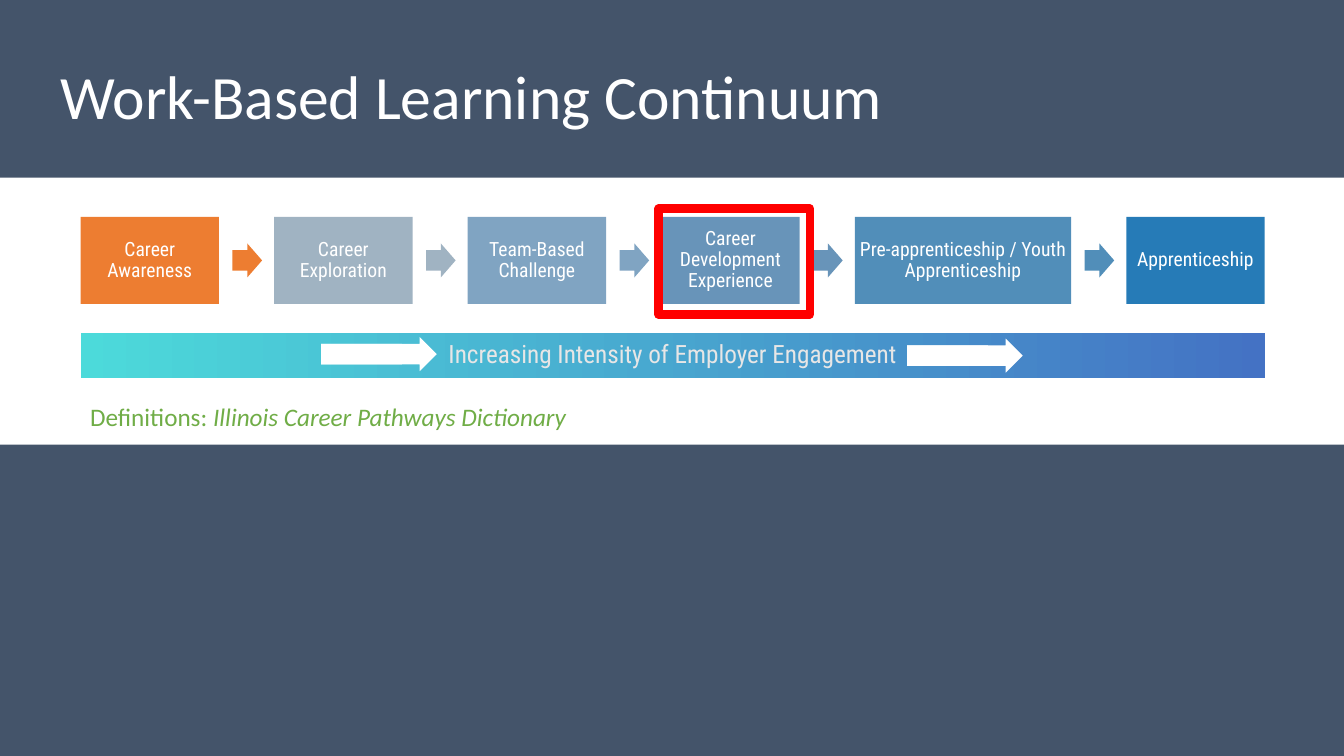
from lxml.etree import SubElement
from pptx import Presentation
from pptx.dml.color import RGBColor
from pptx.enum.shapes import MSO_SHAPE
from pptx.enum.text import MSO_ANCHOR, MSO_AUTO_SIZE, PP_ALIGN
from pptx.oxml.ns import qn
from pptx.util import Inches, Pt

COLORS = {
    "background": "44546A", "white": "FFFFFF", "label": "E7E6E6",
    "awareness": "ED7D31", "exploration": "A0B3C2", "challenge": "80A4C2",
    "development": "6894B9", "youth": "518EB9", "apprenticeship": "267BB7",
    "bar_start": "4CDADA", "bar_end": "4472C4",
    "definition": "70AD47", "highlight": "FF0000",
}
RGB = {name: RGBColor.from_string(value) for name, value in COLORS.items()}

prs = Presentation()
prs.slide_width, prs.slide_height = Inches(13.33), Inches(7.5)
COL, ROW = prs.slide_width / 100, prs.slide_height / 100
slide = prs.slides.add_slide(prs.slide_layouts[1])
slide.background.fill.solid()
slide.background.fill.fore_color.rgb = RGB["background"]


def add_block(kind, col, row, cols, rows, color=None):
    sp = slide.shapes.add_shape(
        kind, int(col * COL), int(row * ROW), int(cols * COL), int(rows * ROW))
    sp.shadow.inherit = False
    sp.line.fill.background()
    if color:
        sp.fill.solid()
        sp.fill.fore_color.rgb = RGB[color]
    else:
        sp.fill.background()
    if kind == MSO_SHAPE.RIGHT_ARROW:
        sp.adjustments[0], sp.adjustments[1] = 0.6, 0.5
    return sp


def format_text(sp, size, font, color, align, inset=0.1, spacing=1.0):
    tf = sp.text_frame
    tf.word_wrap = True
    tf.auto_size = MSO_AUTO_SIZE.NONE
    tf.vertical_anchor = MSO_ANCHOR.MIDDLE
    tf.margin_left = tf.margin_right = Inches(inset)
    tf.margin_top = tf.margin_bottom = Inches(0.05)
    p = tf.paragraphs[0]
    p.alignment = align
    p.line_spacing = spacing
    p.space_before = Pt(0)
    for r in p.runs:
        r.font.size, r.font.name = Pt(size), font
        r.font.color.rgb = RGB[color]


add_block(MSO_SHAPE.RECTANGLE, 0, 23.5, 100, 35.3, "white")

STAGES = [
    ("Career Awareness", "awareness", 10.3),
    ("Career Exploration", "exploration", 10.3),
    ("Team-Based Challenge", "challenge", 10.3),
    ("Career Development Experience", "development", 10.3),
    ("Pre-apprenticeship / Youth Apprenticeship", "youth", 16.1),
    ("Apprenticeship", "apprenticeship", 10.3),
]
GAP = 4.1
col = 6
for i, (text, color, cols) in enumerate(STAGES):
    sp = add_block(MSO_SHAPE.RECTANGLE, col, 28.7, cols, 11.5, color)
    sp.text_frame.text = text
    format_text(sp, 14, "Roboto Condensed", "white", PP_ALIGN.CENTER, 0.05, 0.9)
    if i < len(STAGES) - 1:
        add_block(MSO_SHAPE.RIGHT_ARROW, col + cols + 1, 32.2, 2.2, 4.5, color)
    col += cols + GAP

bar = add_block(MSO_SHAPE.RECTANGLE, 6, 44, 88.1, 6)
bar.fill.gradient()
bar.fill.gradient_angle = 0
for stop, color in zip(bar.fill.gradient_stops, ("bar_start", "bar_end")):
    stop.color.rgb = RGB[color]

label = add_block(MSO_SHAPE.RECTANGLE, 29.4, 44, 41.3, 5.6)
label.text_frame.text = "Increasing Intensity of Employer Engagement"
format_text(label, 18, "Roboto Condensed", "label", PP_ALIGN.CENTER)

for col, row in ((23.9, 44.6), (67.5, 44.8)):
    add_block(MSO_SHAPE.RIGHT_ARROW, col, row, 8.6, 4.5, "white")
    add_block(MSO_SHAPE.RECTANGLE, col, row + 0.9, 6, 2.7, "white")

body = slide.placeholders[1]
p = body.text_frame.paragraphs[0]
pPr = p._p.get_or_add_pPr()
pPr.set("marL", "0")
pPr.set("indent", "0")
SubElement(pPr, qn("a:buNone"))
p.add_run().text = "Definitions: "
r = p.add_run()
r.text = "Illinois Career Pathways Dictionary"
r.font.italic = True
format_text(body, 18, "Calibri", "definition", PP_ALIGN.LEFT, spacing=0.9)
body.text_frame.vertical_anchor = MSO_ANCHOR.TOP

title = slide.shapes.title
title.text_frame.text = "Work-Based Learning Continuum"
format_text(title, 44, "Calibri", "white", PP_ALIGN.LEFT)

for sp, (col, row, cols, rows) in (
        (body, (5.95, 52.9, 90.3, 4.1)), (title, (3.75, 5.3, 92.5, 14.5))):
    sp.left, sp.top = int(col * COL), int(row * ROW)
    sp.width, sp.height = int(cols * COL), int(rows * ROW)
    slide.shapes._spTree.append(sp._element)

highlight = add_block(MSO_SHAPE.RECTANGLE, 49, 27.6, 11.25, 14)
highlight.line.color.rgb = RGB["highlight"]
highlight.line.width = Pt(6)
SubElement(highlight.line._get_or_add_ln(), qn("a:round"))

prs.save("out.pptx")
